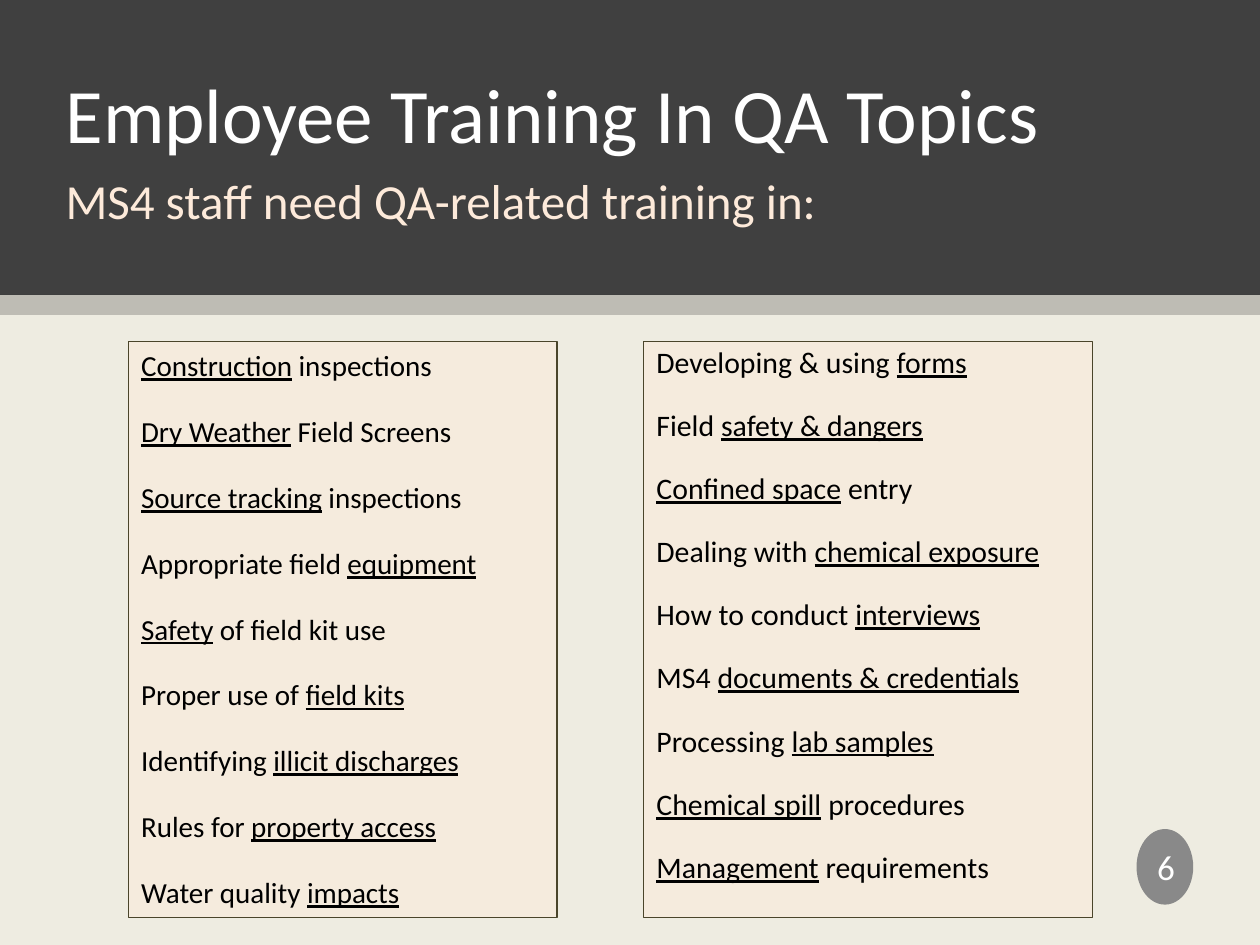
from dataclasses import dataclass

import pptx
import pptx.util
from lxml import etree
from pptx.dml.color import RGBColor
from pptx.enum.shapes import MSO_SHAPE
from pptx.enum.text import MSO_ANCHOR, MSO_AUTO_SIZE, PP_ALIGN
from pptx.oxml.ns import qn

Pt, Inches = pptx.util.Pt, pptx.util.Inches


@dataclass(frozen=True)
class Theme:
    font: str = "Calibri"
    paper: str = "EEECE1"
    header: str = "404040"
    peach: str = "FDEADA"
    outline: str = "4A452A"
    badge: str = "898989"
    black: str = "000000"
    white: str = "FFFFFF"
    title_size: float = 44
    subtitle_size: float = 28
    number_size: float = 20


THEME = Theme()
WIDTH, HEIGHT = 10, 7.5

TITLE = "Employee Training In QA Topics"
SUBTITLE = "MS4 staff need QA-related training in:"
NUMBER = "6"

# Underlined words stand between underscores.
LEFT_TOPICS = [
    "_Construction_ inspections",
    "_Dry Weather_ Field Screens",
    "_Source tracking_ inspections",
    "Appropriate field _equipment_",
    "_Safety_ of field kit use",
    "Proper use of _field kits_",
    "Identifying _illicit discharges_",
    "Rules for _property access_",
    "Water quality _impacts_",
]
RIGHT_TOPICS = [
    "Developing & using _forms_",
    "Field _safety & dangers_",
    "_Confined space_ entry",
    "Dealing with _chemical exposure_",
    "How to conduct _interviews_",
    "MS4 _documents & credentials_",
    "Processing _lab samples_",
    "_Chemical spill_ procedures",
    "_Management_ requirements",
]

HEADER_H, STRIPE_H = 2.34, 0.16
PANEL_TOP, PANEL_H = 2.71, 4.57
# left, width, type size, line spacing, topics
PANELS = [
    (1.02, 3.40, 16.6, 1.0, LEFT_TOPICS),
    (5.11, 3.56, 17, 0.9, RIGHT_TOPICS),
]
# top, height, colour, opacity
BANDS = [
    (0, HEIGHT, THEME.paper, 1),
    (0, HEADER_H, THEME.header, 1),
    (HEADER_H, STRIPE_H, THEME.black, 0.2),
]


def place(sp, left, top, width, height):
    sp.left, sp.top, sp.width, sp.height = map(Inches, (left, top, width, height))


def paint(sp, color, opacity=1):
    sp.fill.solid()
    sp.fill.fore_color.rgb = RGBColor.from_string(color)
    if opacity < 1:
        clr = sp.fill._xPr.find(".//" + qn("a:srgbClr"))
        etree.SubElement(clr, qn("a:alpha")).set("val", str(round(opacity * 100000)))


def add_filled(s, kind, box, color, opacity=1):
    sp = s.shapes.add_shape(kind, *map(Inches, box))
    sp.shadow.inherit = False
    paint(sp, color, opacity)
    sp.line.fill.background()
    return sp


def add_run(p, text, size, color, underline=None):
    r = p.add_run()
    r.text = text
    r.font.name = THEME.font
    r.font.size = Pt(size)
    r.font.color.rgb = RGBColor.from_string(color)
    r.font.underline = underline


def paragraphs(tf, count):
    return [tf.paragraphs[0]] + [tf.add_paragraph() for _ in range(count - 1)]


def add_bands(s):
    """Draw the full-width bands behind the placeholders."""
    for i, (top, height, color, opacity) in enumerate(BANDS):
        band = add_filled(s, MSO_SHAPE.RECTANGLE, (0, top, WIDTH, height), color, opacity)
        s.shapes.element.insert(2 + i, band.element)


def fill_title(sp):
    place(sp, 0.42, 0.47, 9.06, 1.49)
    tf = sp.text_frame
    tf.auto_size = MSO_AUTO_SIZE.NONE
    tf.vertical_anchor = MSO_ANCHOR.MIDDLE
    heading, subtitle = paragraphs(tf, 2)
    heading.alignment = subtitle.alignment = PP_ALIGN.LEFT
    heading.line_spacing = 0.9
    heading.space_after = Pt(6)
    add_run(heading, TITLE, THEME.title_size, THEME.white)
    add_run(subtitle, SUBTITLE, THEME.subtitle_size, THEME.peach)


def fill_panel(sp, left, width, size, spacing, topics):
    place(sp, left, PANEL_TOP, width, PANEL_H)
    paint(sp, THEME.peach, 0.48)
    sp.line.color.rgb = RGBColor.from_string(THEME.outline)
    sp.line.width = Pt(0.75)
    tf = sp.text_frame
    tf.auto_size = MSO_AUTO_SIZE.NONE
    for i, (p, topic) in enumerate(zip(paragraphs(tf, len(topics)), topics)):
        p.line_spacing = spacing
        p.space_before = Pt(17.7 if i else 0)
        pPr = p._p.get_or_add_pPr()
        pPr.set("marL", "0")
        pPr.set("indent", "0")
        etree.SubElement(pPr, qn("a:buNone"))
        for j, part in enumerate(topic.split("_")):
            if part:
                add_run(p, part, size, THEME.black, j % 2 == 1)


def add_number(s):
    sp = add_filled(s, MSO_SHAPE.OVAL, (9.02, 6.58, 0.45, 0.6), THEME.badge)
    tf = sp.text_frame
    tf.margin_left = tf.margin_top = tf.margin_bottom = 0
    tf.margin_right = Inches(0.08)
    tf.vertical_anchor = MSO_ANCHOR.MIDDLE
    p = tf.paragraphs[0]
    p.alignment = PP_ALIGN.RIGHT
    add_run(p, NUMBER, THEME.number_size, THEME.white)


def main():
    prs = pptx.Presentation()
    prs.slide_width, prs.slide_height = Inches(WIDTH), Inches(HEIGHT)
    s = prs.slides.add_slide(prs.slide_layouts.get_by_name("Two Content"))
    title, *bodies = s.placeholders
    add_bands(s)
    fill_title(title)
    for body, panel in zip(bodies, PANELS):
        fill_panel(body, *panel)
    add_number(s)
    prs.save("out.pptx")


if __name__ == "__main__":
    main()
